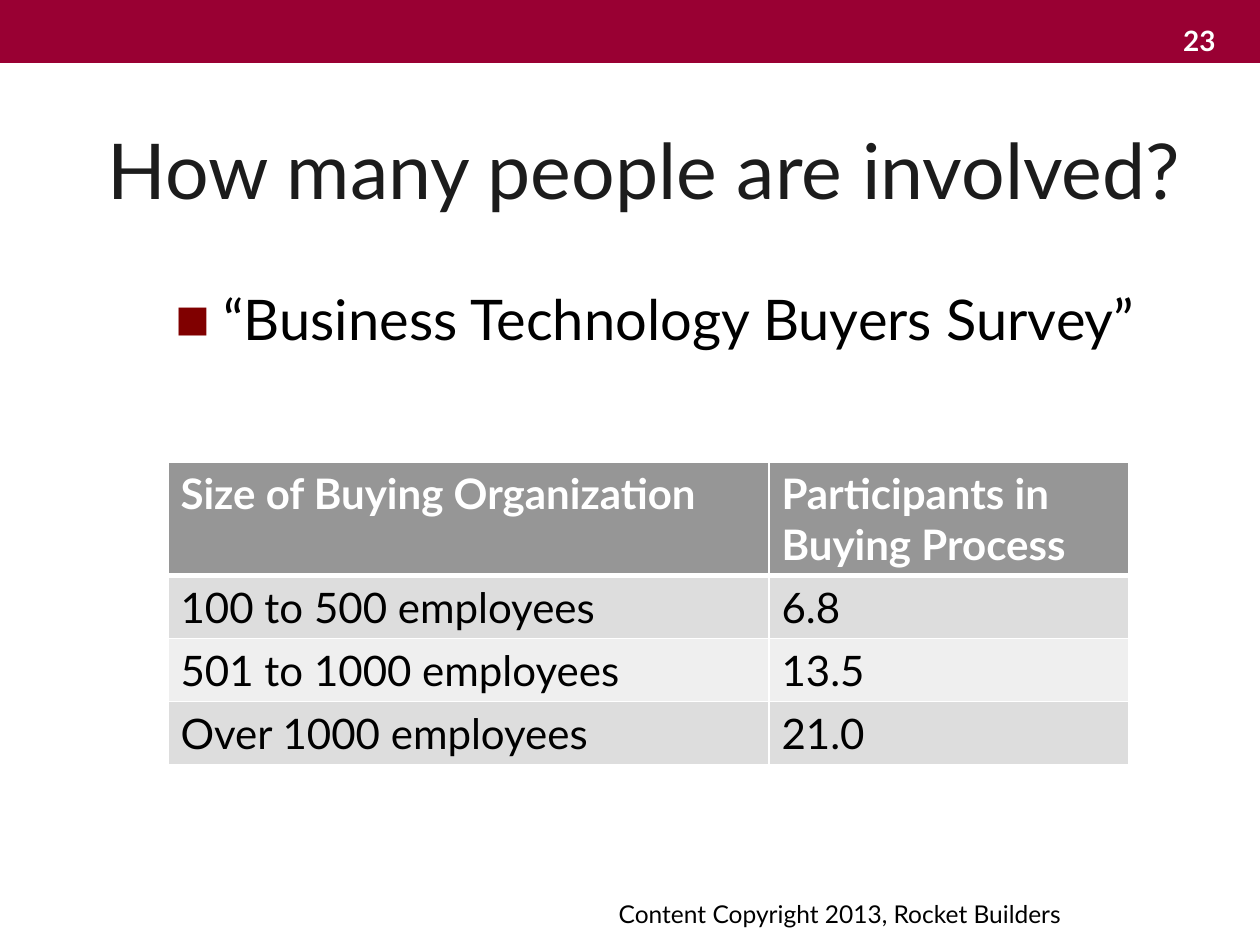
from lxml.etree import SubElement
from pptx import Presentation
from pptx.dml.color import RGBColor
from pptx.enum.shapes import MSO_SHAPE as Shape
from pptx.enum.text import MSO_ANCHOR as Anchor, PP_ALIGN as Align
from pptx.oxml.ns import qn
from pptx.util import Emu, Pt

TITLE = "How many people are involved?"
BULLET = "“Business Technology Buyers Survey”"
FOOTER = "Content Copyright 2013, Rocket Builders"
PAGE_NUMBER = "23"
ROWS = [
    ("Size of Buying Organization", "Participants in Buying Process"),
    ("100 to 500 employees", "6.8"),
    ("501 to 1000 employees", "13.5"),
    ("Over 1000 employees", "21.0"),
]
COLUMN_WIDTHS = [601, 360]
HEADER_HEIGHT, ROW_HEIGHT = 113, 63
HEADER_FILL, BAND_FILLS = "969696", ["DDDDDD", "EFEFEF"]
FONT = "Lato"


def px(count):
    return Emu(count * 914400 // 126)


def color(value):
    return RGBColor.from_string(value)


def style(para, size, tone, bold=False):
    for span in para.runs:
        span.font.name = FONT
        span.font.size = Pt(size)
        span.font.bold = bold
        span.font.color.rgb = color(tone)


def add_text(page, text, place, size, tone, anchor=Anchor.BOTTOM, align=Align.LEFT, bold=False):
    box = page.shapes.add_textbox(*map(px, place))
    frame = box.text_frame
    frame.word_wrap = True
    frame.vertical_anchor = anchor
    frame.text = text
    para = frame.paragraphs[0]
    para.alignment = align
    style(para, size, tone, bold)
    return para


def add_bullet(para, symbol, tone, indent):
    properties = para._p.get_or_add_pPr()
    properties.set("marL", str(px(indent)))
    properties.set("indent", str(-px(indent)))
    fill = SubElement(properties, qn("a:buClr"))
    SubElement(fill, qn("a:srgbClr"), val=tone)
    SubElement(properties, qn("a:buSzPct"), val="65000")
    SubElement(properties, qn("a:buFont"), typeface=FONT)
    SubElement(properties, qn("a:buChar"), char=symbol)


def set_borders(cell, widths):
    properties = cell._tc.get_or_add_tcPr()
    for position, (side, width) in enumerate(widths.items()):
        line = properties.makeelement(qn(f"a:ln{side}"), {"w": str(Pt(width))})
        fill = SubElement(line, qn("a:solidFill"))
        SubElement(fill, qn("a:srgbClr"), val="FFFFFF")
        properties.insert(position, line)


def add_survey(page, left, top):
    heights = [HEADER_HEIGHT] + [ROW_HEIGHT] * (len(ROWS) - 1)
    frame = page.shapes.add_table(
        len(ROWS), len(COLUMN_WIDTHS),
        px(left), px(top), px(sum(COLUMN_WIDTHS)), px(sum(heights)),
    )
    table = frame.table
    for column, width in zip(table.columns, COLUMN_WIDTHS):
        column.width = px(width)
    for index, (row, height, values) in enumerate(zip(table.rows, heights, ROWS)):
        row.height = px(height)
        header = index == 0
        for cell, value in zip(row.cells, values):
            cell.text = value
            style(cell.text_frame.paragraphs[0], 24, "FFFFFF" if header else "000000", header)
            cell.fill.solid()
            cell.fill.fore_color.rgb = color(HEADER_FILL if header else BAND_FILLS[(index - 1) % 2])
            set_borders(cell, {"L": 1, "R": 1, "T": 3 if index == 1 else 1, "B": 3 if header else 1})


def main():
    deck = Presentation()
    deck.slide_width, deck.slide_height = px(1260), px(945)
    page = deck.slides.add_slide(deck.slide_layouts[6])

    band = page.shapes.add_shape(Shape.RECTANGLE, 0, 0, px(1260), px(63))
    band.shadow.inherit = False
    band.fill.solid()
    band.fill.fore_color.rgb = color("990033")
    band.line.fill.background()

    bullet = add_text(page, BULLET, (163, 278, 1071, 567), 32, "000000", Anchor.TOP)
    add_bullet(bullet, "■", "800000", 48)
    add_text(page, TITLE, (95, 63, 1116, 158), 44, "1C1C1C")
    add_text(page, FOOTER, (462, 872, 756, 63), 14, "000000", align=Align.CENTER)
    add_text(page, PAGE_NUMBER, (966, 0, 262, 63), 16, "FFFFFF", align=Align.RIGHT, bold=True)
    add_survey(page, 168, 462)
    deck.save("out.pptx")


if __name__ == "__main__":
    main()
